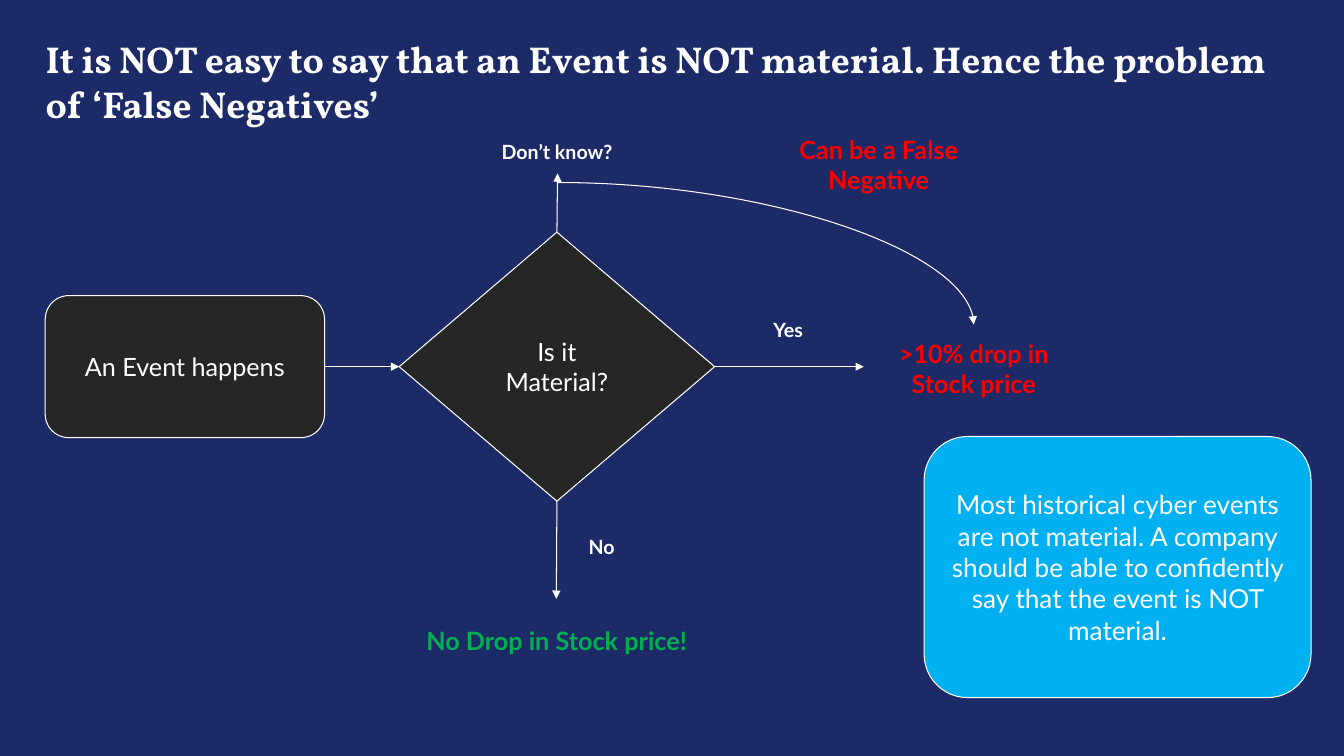
from lxml.etree import SubElement
from pptx import Presentation
from pptx.dml.color import RGBColor
from pptx.enum.shapes import MSO_CONNECTOR, MSO_SHAPE
from pptx.enum.text import MSO_ANCHOR, MSO_AUTO_SIZE, PP_ALIGN
from pptx.oxml.ns import qn
from pptx.util import Cm, Pt

NAVY, CHARCOAL, WHITE = "1C2B68", "262626", "FFFFFF"
RED, GREEN, SKY = "FF0000", "00B050", "00B0F0"
TOP, LEFT, BOTTOM, RIGHT = range(4)


def color(hex_value):
    return RGBColor.from_string(hex_value)


class FlowSlide:
    heading_font = "Vollkorn"
    body_font = "Lato"
    inset = Cm(0.34)
    line_width = Pt(0.75)

    def __init__(self, prs):
        self.s = prs.slides.add_slide(prs.slide_layouts[6])
        self.s.background.fill.solid()
        self.s.background.fill.fore_color.rgb = color(NAVY)

    def add_text(self, sp, text, size, hue=WHITE, bold=False, font=body_font,
                 align=PP_ALIGN.CENTER, anchor=MSO_ANCHOR.MIDDLE):
        tf = sp.text_frame
        tf.word_wrap = True
        tf.vertical_anchor = anchor
        tf.margin_left = tf.margin_right = self.inset
        tf.margin_top = tf.margin_bottom = self.inset
        p = tf.paragraphs[0]
        p.alignment = align
        r = p.add_run()
        r.text = text
        r.font.name = font
        r.font.size = Pt(size)
        r.font.bold = bold
        r.font.color.rgb = color(hue)

    def box(self, area):
        sp = self.s.shapes.add_textbox(*map(Cm, area))
        sp.text_frame.auto_size = MSO_AUTO_SIZE.SHAPE_TO_FIT_TEXT
        return sp

    def title(self, area, text):
        self.add_text(self.box(area), text, 26.7, bold=True,
                      font=self.heading_font, align=PP_ALIGN.LEFT)

    def label(self, area, text, size=14, hue=WHITE):
        self.add_text(self.box(area), text, size, hue, bold=True,
                      anchor=MSO_ANCHOR.TOP)

    def node(self, kind, area, text, fill=CHARCOAL, size=18):
        sp = self.s.shapes.add_shape(kind, *map(Cm, area))
        sp.shadow.inherit = False
        sp.fill.solid()
        sp.fill.fore_color.rgb = color(fill)
        sp.line.color.rgb = color(WHITE)
        sp.line.width = self.line_width
        self.add_text(sp, text, size)
        return sp

    def arrow(self, start, end, kind=MSO_CONNECTOR.STRAIGHT):
        cx = self.s.shapes.add_connector(kind, *map(Cm, start + end))
        cx.line.color.rgb = color(WHITE)
        cx.line.width = self.line_width
        props = cx.element.spPr
        SubElement(props.find(qn("a:ln")), qn("a:tailEnd"), type="triangle")
        SubElement(props, qn("a:effectLst"))
        return cx

    def curve(self, start, end):
        cx = self.arrow(start, end, MSO_CONNECTOR.CURVE)
        cx.element.spPr.find(qn("a:prstGeom")).set("prst", "curvedConnector2")


def main():
    prs = Presentation()
    prs.slide_width, prs.slide_height = Cm(33.87), Cm(19.05)
    flow = FlowSlide(prs)

    flow.title((0.81, 0.56, 32.23, 2.97),
               "It is NOT easy to say that an Event is NOT material. "
               "Hence the problem of ‘False Negatives’")

    decision = flow.node(MSO_SHAPE.FLOWCHART_DECISION,
                         (10.06, 5.85, 7.95, 6.78), "Is it Material?")
    event = flow.node(MSO_SHAPE.ROUNDED_RECTANGLE,
                      (1.14, 7.45, 7.04, 3.58), "An Event happens")

    mid_x, mid_y = 14.04, 9.24
    inflow = flow.arrow((8.18, mid_y), (10.06, mid_y))
    inflow.begin_connect(event, RIGHT)
    inflow.end_connect(decision, LEFT)
    for site, start, end in (
        (RIGHT, (18.01, mid_y), (21.77, mid_y)),
        (BOTTOM, (mid_x, 12.63), (14.02, 15.09)),
        (TOP, (mid_x, 5.85), (14.05, 4.37)),
    ):
        flow.arrow(start, end).begin_connect(decision, site)
    flow.curve((14.05, 4.6), (24.54, 8.18))

    flow.label((18.72, 7.72, 2.29, 1.27), "Yes")
    flow.label((14.02, 13.18, 2.29, 1.27), "No")
    flow.label((11.46, 3.23, 5.16, 1.27), "Don’t know?")
    flow.label((21.72, 8.18, 5.64, 2.24), ">10% drop in Stock price", 18, RED)
    flow.label((9.93, 15.42, 8.2, 1.45), "No Drop in Stock price!", 18, GREEN)
    flow.label((18.97, 3.05, 6.35, 2.24), "Can be a False Negative", 18, RED)

    flow.node(MSO_SHAPE.ROUNDED_RECTANGLE, (23.29, 11, 9.75, 6.58),
              "Most historical cyber events are not material. A company should "
              "be able to confidently say that the event is NOT material.",
              SKY, 18.7)

    prs.save("out.pptx")


if __name__ == "__main__":
    main()
